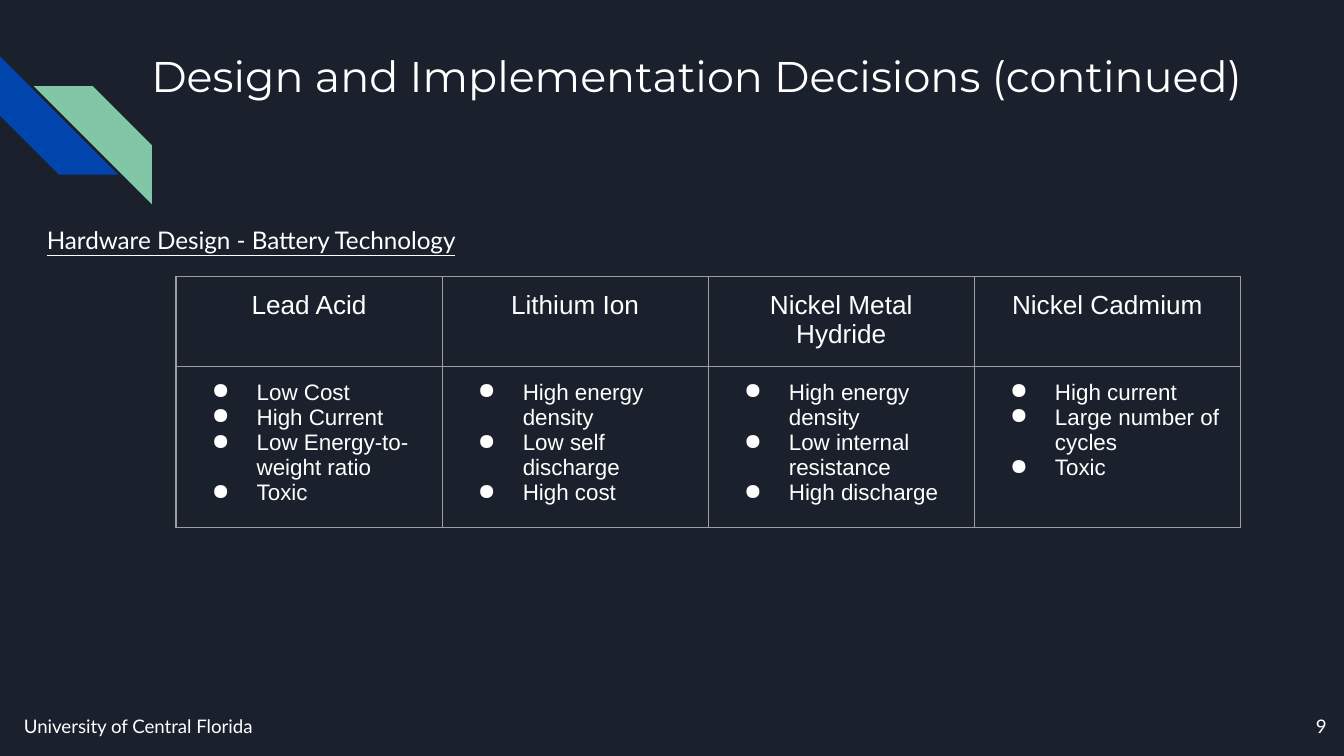
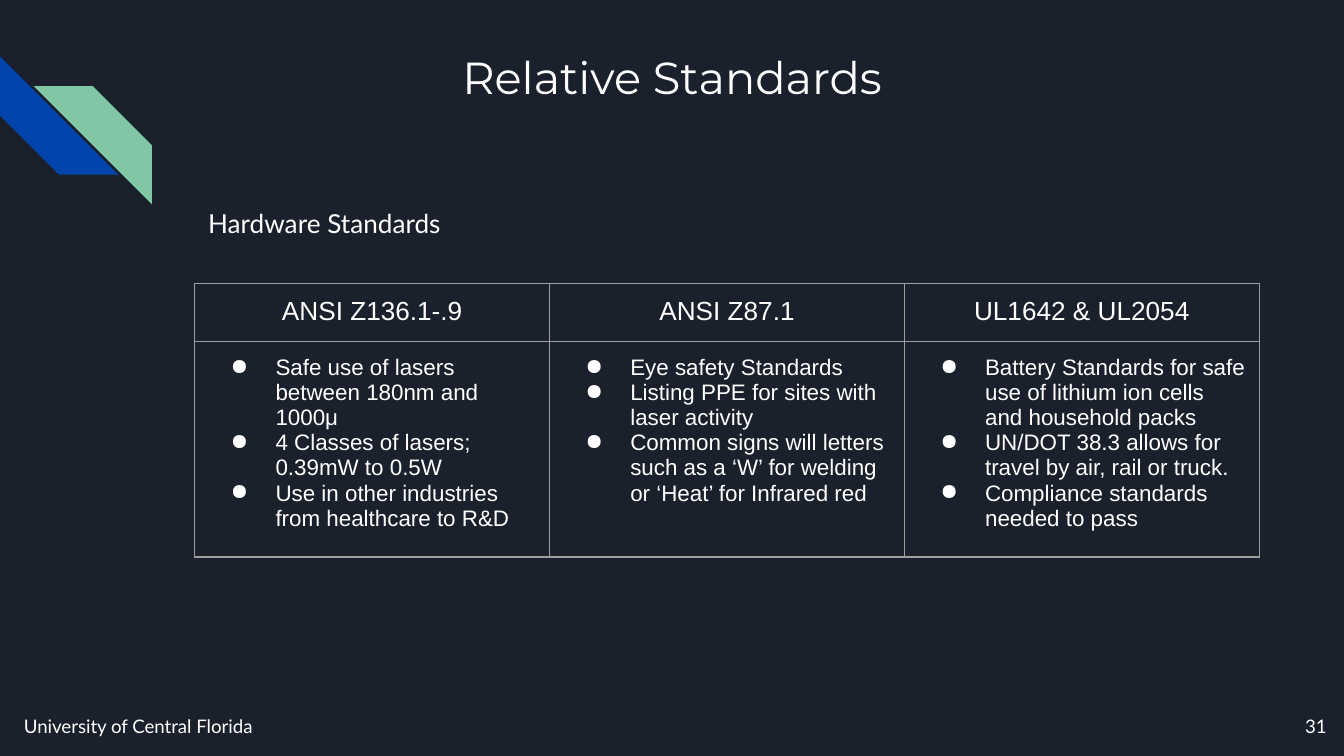
"""Build two dark slides that compare batteries and list hardware standards."""
from dataclasses import dataclass

from lxml.etree import SubElement
from pptx import Presentation
from pptx.dml.color import RGBColor
from pptx.enum.shapes import MSO_SHAPE as Preset
from pptx.enum.text import MSO_ANCHOR as Anchor, PP_ALIGN as Align
from pptx.oxml.ns import qn
from pptx.util import Pt

FOOTER = "University of Central Florida"

SLIDES = [
    {
        "title": "Design and Implementation Decisions (continued)",
        "title_left": 38.16,
        "title_size": 23,
        "subtitle": "Hardware Design - Battery Technology",
        "subtitle_frame": (18, 110.88, 294.48, 254.88),
        "subtitle_style": {"size": 13, "underline": True, "spacing": 1.15},
        "number": "9",
        "table_corner": (94.32, 148.32),
        "columns": {
            "Lead Acid": ["Low Cost", "High Current", "Low Energy-to-weight ratio", "Toxic"],
            "Lithium Ion": ["High energy density", "Low self discharge", "High cost"],
            "Nickel Metal Hydride": [
                "High energy density", "Low internal resistance", "High discharge",
            ],
            "Nickel Cadmium": ["High current", "Large number of cycles", "Toxic"],
        },
    },
    {
        "title": "Relative Standards",
        "title_left": 24.48,
        "title_size": 24,
        "subtitle": "Hardware Standards",
        "subtitle_frame": (104.4, 103.68, 141.12, 20.16),
        "subtitle_style": {"size": 14},
        "number": "31",
        "table_corner": (104.4, 151.92),
        "columns": {
            "ANSI Z136.1-.9": [
                "Safe use of lasers between 180nm and 1000μ",
                "4 Classes of lasers; 0.39mW to 0.5W",
                "Use in other industries from healthcare to R&D",
            ],
            "ANSI Z87.1": [
                "Eye safety Standards",
                "Listing PPE for sites with laser activity",
                "Common signs will letters such as a ‘W’ for welding or ‘Heat’ for Infrared red",
            ],
            "UL1642 & UL2054": [
                "Battery Standards for safe use of lithium ion cells and household packs",
                "UN/DOT 38.3 allows for travel by air, rail or truck.",
                "Compliance standards needed to pass",
            ],
        },
    },
]


@dataclass(frozen=True)
class Theme:
    """Colours, fonts and type sizes of the deck."""
    background: str = "1B212C"
    text: str = "FFFFFF"
    blue: str = "0145AC"
    green: str = "82C7A5"
    border: str = "9E9E9E"
    title_font: str = "Montserrat"
    body_font: str = "Lato"
    table_font: str = "Arial"
    header_size: int = 14
    bullet_size: int = 12
    footer_size: int = 10


THEME = Theme()
INSET = 7.2
TITLE_TOP, TITLE_WIDTH, TITLE_HEIGHT = 19.44, 671.04, 46.08
FOOTER_FRAME = (5.76, 373.68, 141.12, 30.96)
NUMBER_FRAME = (674.64, 373.68, 43.2, 30.96)
STRIPE_SIZE = 63.36
STRIPES = [(0, 30.24, 270, THEME.blue), (18, 46.08, 90, THEME.green)]
TABLE_WIDTH, ROW_HEIGHT = 570.24, 30.24
BULLET_MARGIN, BULLET_INDENT = 36, -24
BORDER_WIDTH = 0.75


def color(code):
    """Turn a hex code into a colour."""
    return RGBColor.from_string(code)


def style_para(para, font, size, align=Align.LEFT, underline=None, spacing=None):
    """Set the type and alignment of one paragraph."""
    para.alignment = align
    if spacing:
        para.line_spacing = spacing
    para.font.name = font
    para.font.size = Pt(size)
    para.font.underline = underline
    para.font.color.rgb = color(THEME.text)


def add_text(page, text, frame, font, anchor=Anchor.TOP, **style):
    """Add a wrapped text box with one styled paragraph."""
    box = page.shapes.add_textbox(*map(Pt, frame))
    body = box.text_frame
    body.word_wrap = True
    body.vertical_anchor = anchor
    body.margin_left = body.margin_right = Pt(INSET)
    body.margin_top = body.margin_bottom = Pt(INSET)
    body.text = text
    style_para(body.paragraphs[0], font, **style)


def add_solid(parent, tag, code):
    """Append a colour element, nested under the given tag."""
    holder = SubElement(parent, qn(tag))
    SubElement(holder, qn("a:srgbClr"), val=code)


def add_bullet(para):
    """Give a paragraph a hanging round bullet."""
    props = para._p.get_or_add_pPr()
    props.set("marL", str(Pt(BULLET_MARGIN)))
    props.set("indent", str(Pt(BULLET_INDENT)))
    add_solid(props, "a:buClr", THEME.text)
    SubElement(props, qn("a:buChar"), char="●")


def prepare_cell(cell):
    """Outline a cell, clear its fill and set its margins."""
    props = cell._tc.get_or_add_tcPr()
    for side in ("a:lnL", "a:lnR", "a:lnT", "a:lnB"):
        line = SubElement(props, qn(side), w=str(Pt(BORDER_WIDTH)))
        add_solid(line, "a:solidFill", THEME.border)
    cell.fill.background()
    cell.margin_left = cell.margin_right = Pt(INSET)
    cell.margin_top = cell.margin_bottom = Pt(INSET)


def add_columns(page, corner, columns):
    """Add a table with a heading and a bullet list in each column."""
    frame = (*corner, TABLE_WIDTH, 2 * ROW_HEIGHT)
    table = page.shapes.add_table(2, len(columns), *map(Pt, frame)).table
    table.first_row = table.horz_banding = False
    for index, (heading, points) in enumerate(columns.items()):
        table.columns[index].width = Pt(TABLE_WIDTH / len(columns))
        header, details = table.cell(0, index), table.cell(1, index)
        for cell in (header, details):
            prepare_cell(cell)
        header.text = heading
        style_para(header.text_frame.paragraphs[0], THEME.table_font,
                   THEME.header_size, Align.CENTER)
        details.text = "\n".join(points)
        for para in details.text_frame.paragraphs:
            add_bullet(para)
            style_para(para, THEME.table_font, THEME.bullet_size)


def add_stripes(page):
    """Add the two diagonal stripes at the left edge."""
    for left, top, rotation, fill in STRIPES:
        stripe = page.shapes.add_shape(
            Preset.DIAGONAL_STRIPE, Pt(left), Pt(top), Pt(STRIPE_SIZE), Pt(STRIPE_SIZE))
        stripe.rotation = rotation
        stripe.shadow.inherit = False
        stripe.fill.solid()
        stripe.fill.fore_color.rgb = color(fill)
        stripe.line.fill.background()


def add_page(deck, content):
    """Add one slide with its shared parts and its table."""
    page = deck.slides.add_slide(deck.slide_layouts[6])
    page.background.fill.solid()
    page.background.fill.fore_color.rgb = color(THEME.background)
    add_stripes(page)
    add_text(page, content["title"],
             (content["title_left"], TITLE_TOP, TITLE_WIDTH, TITLE_HEIGHT),
             THEME.title_font, size=content["title_size"], align=Align.CENTER)
    add_text(page, content["subtitle"], content["subtitle_frame"],
             THEME.body_font, **content["subtitle_style"])
    for text, frame, align in ((content["number"], NUMBER_FRAME, Align.RIGHT),
                               (FOOTER, FOOTER_FRAME, Align.LEFT)):
        add_text(page, text, frame, THEME.body_font, Anchor.MIDDLE,
                 size=THEME.footer_size, align=align)
    add_columns(page, content["table_corner"], content["columns"])


def main():
    """Build and save the deck."""
    deck = Presentation()
    deck.slide_width, deck.slide_height = Pt(720), Pt(405)
    for content in SLIDES:
        add_page(deck, content)
    deck.save("out.pptx")


if __name__ == "__main__":
    main()
